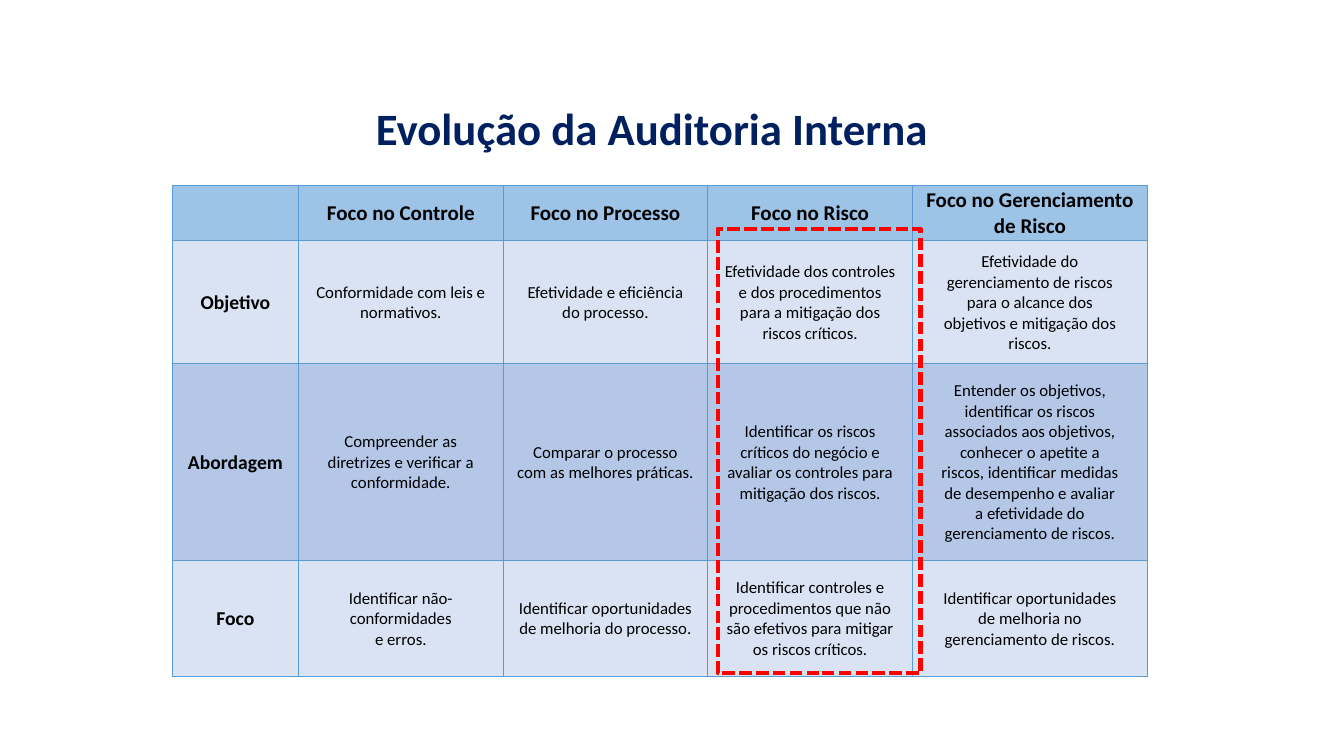
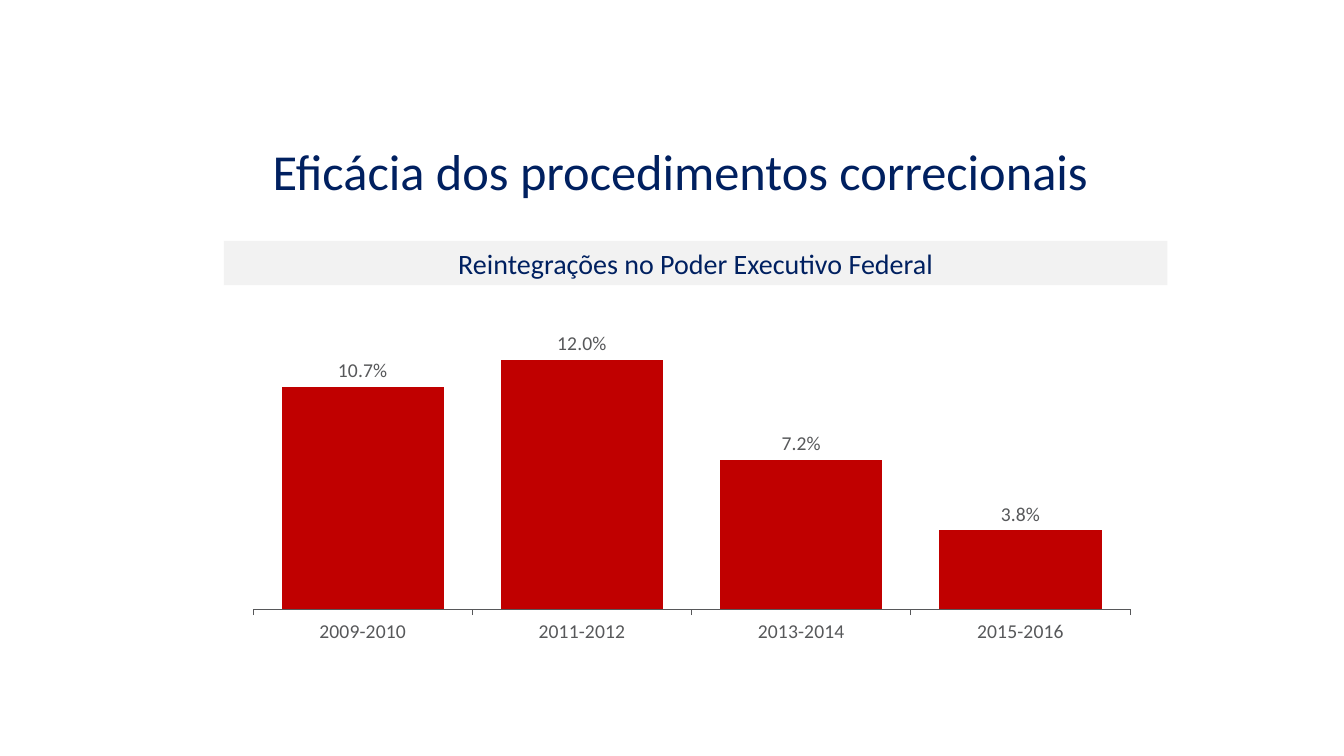
from pptx import Presentation
from pptx.chart.data import CategoryChartData
from pptx.dml.color import RGBColor
from pptx.enum.chart import XL_CHART_TYPE, XL_LABEL_POSITION, XL_TICK_LABEL_POSITION, XL_TICK_MARK
from pptx.enum.dml import MSO_LINE
from pptx.enum.shapes import MSO_SHAPE
from pptx.enum.text import MSO_ANCHOR, PP_ALIGN
from pptx.oxml import parse_xml
from pptx.oxml.ns import nsdecls
from pptx.util import Inches, Pt

INK = {
    "navy": "002060", "black": "000000", "gray": "57585A", "pale": "F2F2F2",
    "head": "9DC3E6", "light": "DAE3F3", "mid": "B4C7E7", "edge": "5B9BD5",
    "red": "FF0000", "bar": "C00000",
}
HUE = {name: RGBColor.from_string(code) for name, code in INK.items()}
FACE = "Calibri"

deck = Presentation()
deck.slide_width, deck.slide_height = Inches(13.33), Inches(7.5)
blank = deck.slide_layouts[6]


def area(left, top, width, height):
    """Turn percentages of the slide into lengths."""
    wide, high = deck.slide_width, deck.slide_height
    return [int(part * full / 100) for part, full in
            zip((left, top, width, height), (wide, high, wide, high))]


def write(frame, text, size, hue="navy", bold=False, align=PP_ALIGN.CENTER, space=1.0):
    """Fill the first paragraph; line feeds become line breaks."""
    frame.word_wrap = True
    line = frame.paragraphs[0]
    line.text = text
    line.alignment = align
    line.line_spacing = space
    for run in line.runs:
        run.font.name, run.font.size = FACE, Pt(size)
        run.font.bold, run.font.color.rgb = bold, HUE[hue]


# Slide 1: title
page = deck.slides.add_slide(blank)
title = page.shapes.add_textbox(*area(27.23, 13.47, 43.74, 8.13))
write(title.text_frame, "Evolução da Auditoria Interna", 32, bold=True,
      align=PP_ALIGN.LEFT, space=0.9)

# Slide 1: table
cells = [
    ["", "Foco no Controle", "Foco no Processo", "Foco no Risco",
     "Foco no Gerenciamento de Risco"],
    ["Objetivo",
     "Conformidade com leis e\nnormativos.",
     "Efetividade e eficiência\ndo processo.",
     "Efetividade dos controles\ne dos procedimentos\npara a mitigação dos\nriscos críticos.",
     "Efetividade do\ngerenciamento de riscos\npara o alcance dos\n"
     "objetivos e mitigação dos\nriscos."],
    ["Abordagem",
     "Compreender as\ndiretrizes e verificar a\nconformidade.",
     "Comparar o processo\ncom as melhores práticas.",
     "Identificar os riscos\ncríticos do negócio e\navaliar os controles para\n"
     "mitigação dos riscos.",
     "Entender os objetivos,\nidentificar os riscos\nassociados aos objetivos,\n"
     "conhecer o apetite a\nriscos, identificar medidas\nde desempenho e avaliar\n"
     "a efetividade do\ngerenciamento de riscos."],
    ["Foco",
     "Identificar não-conformidades\ne erros.",
     "Identificar oportunidades\nde melhoria do processo.",
     "Identificar controles e\nprocedimentos que não\nsão efetivos para mitigar\n"
     "os riscos críticos.",
     "Identificar oportunidades\nde melhoria no\ngerenciamento de riscos."],
]
grid = page.shapes.add_table(4, 5, *area(12.83, 24.53, 72.6, 65)).table
grid.first_row = grid.horz_banding = False
for col, width in zip(grid.columns, (1.25, 2.03, 2.03, 2.03, 2.33)):
    col.width = Inches(width)
for row, height in zip(grid.rows, (0.55, 1.22, 1.95, 1.15)):
    row.height = Inches(height)

for r, texts in enumerate(cells):
    for c, text in enumerate(texts):
        cell = grid.cell(r, c)
        cell.vertical_anchor = MSO_ANCHOR.MIDDLE
        cell.margin_left = cell.margin_right = cell.margin_top = Inches(0.01)
        cell.margin_bottom = 0
        if text:
            size = 15 if r == 0 else 14 if c == 0 else 12
            write(cell.text_frame, text, size, "black", bold=r == 0 or c == 0)
        for side in "LRTB":
            cell._tc.get_or_add_tcPr().append(parse_xml(
                f'<a:ln{side} {nsdecls("a")} w="{Pt(1)}"><a:solidFill>'
                f'<a:srgbClr val="{INK["edge"]}"/></a:solidFill></a:ln{side}>'))
        cell.fill.solid()
        cell.fill.fore_color.rgb = HUE[("head", "light", "mid", "light")[r]]

# Slide 1: dashed frame around the risk column
mark = page.shapes.add_shape(MSO_SHAPE.RECTANGLE, *area(53.41, 30.27, 15.08, 58.8))
mark.shadow.inherit = False
mark.fill.background()
mark.line.color.rgb, mark.line.width = HUE["red"], Pt(3)
mark.line.dash_style = MSO_LINE.SQUARE_DOT

# Slide 2: title and band
page = deck.slides.add_slide(blank)
title = page.shapes.add_textbox(*area(16.65, 14.67, 67.97, 16.67))
title.text_frame.vertical_anchor = MSO_ANCHOR.MIDDLE
write(title.text_frame, "Eficácia dos procedimentos correcionais", 36, space=0.9)

band = page.shapes.add_shape(MSO_SHAPE.RECTANGLE, *area(16.65, 31.87, 70.22, 5.87))
band.shadow.inherit = False
band.fill.solid()
band.fill.fore_color.rgb = HUE["pale"]
band.line.fill.background()
write(band.text_frame, "Reintegrações no Poder Executivo Federal", 20)

# Slide 2: chart
data = CategoryChartData(number_format="0.0%")
data.categories = ["2009-2010", "2011-2012", "2013-2014", "2015-2016"]
data.add_series("Series 1", (0.107, 0.12, 0.072, 0.038))
chart = page.shapes.add_chart(XL_CHART_TYPE.COLUMN_CLUSTERED,
                              *area(17.48, 41.2, 67.97, 44.8), data).chart
chart.has_title = chart.has_legend = False
chart.font.name, chart.font.size = FACE, Pt(10)
chart.font.color.rgb = HUE["black"]

plot = chart.plots[0]
plot.gap_width, plot.vary_by_categories = 35, False
fill = plot.series[0].format.fill
fill.solid()
fill.fore_color.rgb = HUE["bar"]
plot.has_data_labels = True
tags = plot.data_labels
tags.show_value = True
tags.position = XL_LABEL_POSITION.OUTSIDE_END
tags.number_format, tags.number_format_is_linked = "0.0%", False

base = chart.category_axis
base.major_tick_mark = XL_TICK_MARK.OUTSIDE
base.tick_label_position = XL_TICK_LABEL_POSITION.LOW
base.format.line.color.rgb, base.format.line.width = HUE["gray"], Pt(0.75)
for font in (tags.font, base.tick_labels.font):
    font.name, font.size, font.color.rgb = FACE, Pt(14), HUE["gray"]

scale = chart.value_axis
scale.visible = scale.has_major_gridlines = False
scale.minimum_scale, scale.maximum_scale = 0, 0.14

deck.save("out.pptx")
